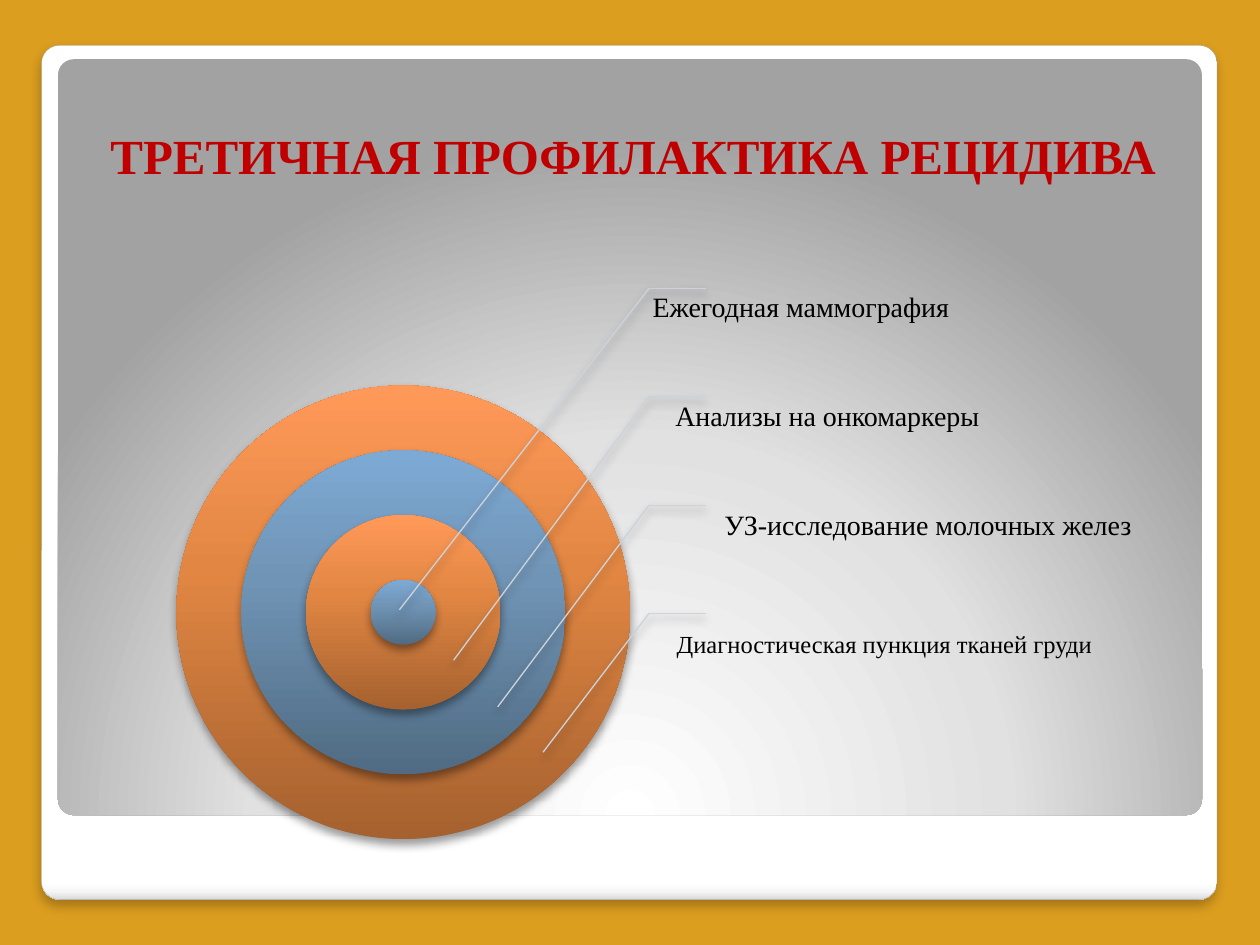
from dataclasses import dataclass
from pptx import Presentation
from pptx import util as u
from pptx.dml.color import RGBColor
from pptx.enum import shapes, text
from pptx.oxml import parse_xml
from pptx.oxml.ns import nsdecls

COLS, ROWS = 100, 75


@dataclass(frozen=True)
class Theme:
    font: str = "Times New Roman"
    back: str = "DC9E1F"
    title: str = "C00000"
    ink: str = "000000"
    rim: str = "A4A4A4"
    lead: str = "CCD3DB"
    frame: tuple = ((0, "FFFFFF"), (98, "FFFFFF"), (99, "F7F7F7"), (100, "DADADA"))
    panel: tuple = ((0, "FFFFFF"), (55, "E1E1E1"), (100, "A2A2A2"))
    orange: tuple = ((0, "A5612F"), (60, "E28743"), (100, "FF9959"))
    blue: tuple = ((0, "506B83"), (60, "7094B5"), (100, "7DAAD5"))
    soft: tuple = (25, 6, 4)
    deep: tuple = (40, 5.2, 3)
    head: int = 28
    body: int = 16
    small: int = 14


class Board:
    def __init__(self, deck, theme):
        self.theme = theme
        self.slide = deck.slides.add_slide(deck.slide_layouts[6])
        self.items = self.slide.shapes
        self.wide = deck.slide_width / COLS
        self.high = deck.slide_height / ROWS
        fill = self.slide.background.fill
        fill.solid()
        fill.fore_color.rgb = RGBColor.from_string(theme.back)

    def spot(self, col, row):
        return round(col * self.wide), round(row * self.high)

    def blend(self, item, stops, angle):
        marks = "".join(
            f'<a:gs pos="{pos * 1000}"><a:srgbClr val="{tone}"/></a:gs>'
            for pos, tone in stops)
        if angle is None:
            way = ('<a:path path="circle"><a:fillToRect l="50000" t="175000" '
                   'r="50000" b="-75000"/></a:path>')
        else:
            way = f'<a:lin ang="{angle * 60000}" scaled="0"/>'
        item._element.spPr.insert(2, parse_xml(
            f'<a:gradFill {nsdecls("a")} rotWithShape="1">'
            f'<a:gsLst>{marks}</a:gsLst>{way}</a:gradFill>'))

    def shade(self, item, look):
        alpha, blur, gap = look
        item._element.spPr.append(parse_xml(
            f'<a:effectLst {nsdecls("a")}><a:outerShdw blurRad="{u.Pt(blur)}" '
            f'dist="{u.Pt(gap)}" dir="5400000" algn="ctr" rotWithShape="0">'
            f'<a:srgbClr val="000000"><a:alpha val="{alpha * 1000}"/></a:srgbClr>'
            f'</a:outerShdw></a:effectLst>'))

    def shape(self, kind, box, stops, angle=None, look=None, rim=None):
        item = self.items.add_shape(kind, *self.spot(*box[:2]), *self.spot(*box[2:]))
        self.blend(item, stops, angle)
        if rim:
            item.line.color.rgb = RGBColor.from_string(rim)
            item.line.width = u.Pt(0.16)
        else:
            item.line.fill.background()
        if look:
            self.shade(item, look)
        else:
            item.shadow.inherit = False
        return item

    def card(self, box, stops, **style):
        item = self.shape(shapes.MSO_SHAPE.ROUNDED_RECTANGLE, box, stops, **style)
        item.adjustments[0] = 0.021

    def ring(self, col, row, size, stops):
        box = (col - size / 2, row - size / 2, size, size)
        self.shape(shapes.MSO_SHAPE.OVAL, box, stops, 270, self.theme.deep)

    def line(self, start, end):
        item = self.items.add_connector(
            shapes.MSO_CONNECTOR.STRAIGHT, *self.spot(*start), *self.spot(*end))
        item.line.color.rgb = RGBColor.from_string(self.theme.lead)
        item.line.width = u.Pt(0.75)
        self.shade(item, self.theme.deep)

    def words(self, box, copy, size, tone, bold=False):
        item = self.items.add_textbox(*self.spot(*box[:2]), *self.spot(*box[2:]))
        frame = item.text_frame
        frame.word_wrap = True
        para = frame.paragraphs[0]
        run = para.add_run()
        run.text = copy
        run.font.name = self.theme.font
        run.font.size = u.Pt(size)
        run.font.bold = bold
        run.font.color.rgb = RGBColor.from_string(tone)
        return frame, para

    def title(self, box, copy):
        frame, para = self.words(box, copy, self.theme.head, self.theme.title, True)
        frame.vertical_anchor = text.MSO_ANCHOR.BOTTOM
        para.alignment = text.PP_ALIGN.CENTER

    def label(self, box, copy, size):
        frame, para = self.words(box, copy, size, self.theme.ink)
        frame.vertical_anchor = text.MSO_ANCHOR.MIDDLE
        frame.margin_left = u.Inches(0.12)
        frame.margin_top = frame.margin_right = frame.margin_bottom = u.Inches(0.02)
        para.line_spacing = 0.9
        para.space_after = u.Pt(0.35 * size)


def main():
    deck = Presentation()
    deck.slide_width, deck.slide_height = u.Inches(10), u.Inches(7.5)
    theme = Theme()
    board = Board(deck, theme)

    board.card((3.3, 3.6, 93.3, 67.8), theme.frame, angle=90,
               look=theme.soft, rim=theme.rim)
    board.card((4.6, 4.7, 90.8, 60), theme.panel)
    board.title((5.5, 3.6, 89.5, 11.5), "ТРЕТИЧНАЯ ПРОФИЛАКТИКА РЕЦИДИВА")

    for part, stops in zip((7, 5, 3, 1), (theme.orange, theme.blue) * 2):
        board.ring(32, 48.6, 36 * part / 7, stops)

    labels = (
        ("Ежегодная маммография", (50.6, 20.2, 43), theme.body, (31.7, 48.4)),
        ("Анализы на онкомаркеры", (52.4, 28.8, 33), theme.body, (36, 52.4)),
        ("УЗ-исследование молочных желез", (56.3, 37.5, 34.7), theme.body, (39.5, 56.1)),
        ("Диагностическая пункция тканей груди", (52.5, 46.9, 42.5), theme.small, (43.1, 59.7)),
    )
    step = 8.6
    for rank, (copy, place, size, tip) in enumerate(labels):
        bend = (51.5, 22.9 + rank * step)
        board.label((*place, step), copy, size)
        board.line(bend, (56, bend[1]))
        board.line(bend, tip)

    deck.save("out.pptx")


if __name__ == "__main__":
    main()
